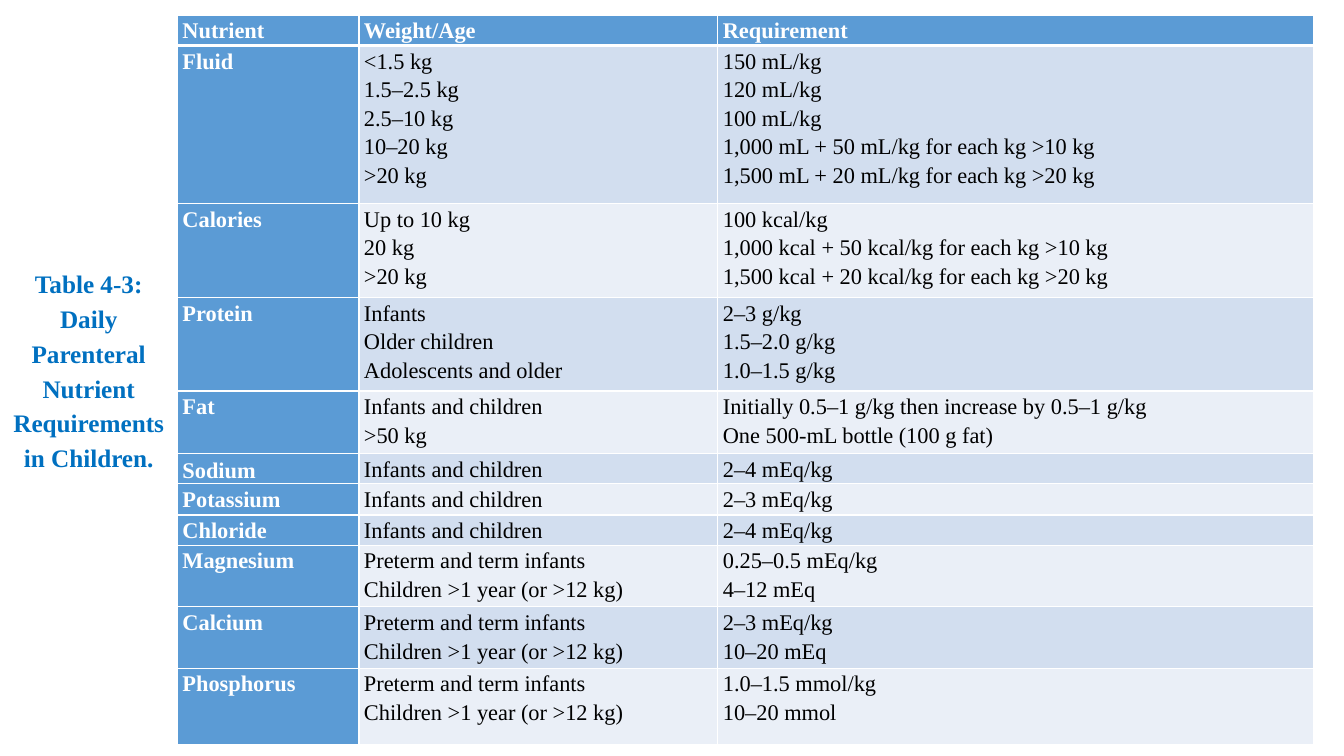
from lxml.etree import SubElement
from pptx import Presentation
from pptx.dml.color import RGBColor
from pptx.enum.text import MSO_ANCHOR, MSO_AUTO_SIZE, PP_ALIGN
from pptx.oxml.ns import qn
from pptx.util import Inches, Pt

COLORS = {
    "title": "0070C0",
    "accent": "5B9BD5",
    "band_dark": "D2DEEF",
    "band_light": "EAEFF7",
    "white": "FFFFFF",
    "black": "000000",
}

HEADINGS = ["Nutrient", "Weight/Age", "Requirement"]
COLUMN_WIDTHS = [1.8, 3.56, 5.91]
HEADING_HEIGHT = 0.3

# Nutrient, row height, and pairs of weight/age and requirement
NUTRIENTS = [
    ("Fluid", 1.57, [
        ("<1.5 kg", "150 mL/kg"),
        ("1.5–2.5 kg", "120 mL/kg"),
        ("2.5–10 kg", "100 mL/kg"),
        ("10–20 kg", "1,000 mL + 50 mL/kg for each kg >10 kg"),
        (">20 kg", "1,500 mL + 20 mL/kg for each kg >20 kg"),
    ]),
    ("Calories", 0.93, [
        ("Up to 10 kg", "100 kcal/kg"),
        ("20 kg", "1,000 kcal + 50 kcal/kg for each kg >10 kg"),
        (">20 kg", "1,500 kcal + 20 kcal/kg for each kg >20 kg"),
    ]),
    ("Protein", 0.93, [
        ("Infants", "2–3 g/kg"),
        ("Older children", "1.5–2.0 g/kg"),
        ("Adolescents and older", "1.0–1.5 g/kg"),
    ]),
    ("Fat", 0.62, [
        ("Infants and children", "Initially 0.5–1 g/kg then increase by 0.5–1 g/kg"),
        (">50 kg", "One 500-mL bottle (100 g fat)"),
    ]),
    ("Sodium", 0.3, [("Infants and children", "2–4 mEq/kg")]),
    ("Potassium", 0.31, [("Infants and children", "2–3 mEq/kg")]),
    ("Chloride", 0.3, [("Infants and children", "2–4 mEq/kg")]),
    ("Magnesium", 0.61, [
        ("Preterm and term infants", "0.25–0.5 mEq/kg"),
        ("Children >1 year (or >12 kg)", "4–12 mEq"),
    ]),
    ("Calcium", 0.61, [
        ("Preterm and term infants", "2–3 mEq/kg"),
        ("Children >1 year (or >12 kg)", "10–20 mEq"),
    ]),
    ("Phosphorus", 0.76, [
        ("Preterm and term infants", "1.0–1.5 mmol/kg"),
        ("Children >1 year (or >12 kg)", "10–20 mmol"),
    ]),
]


class SlideBuilder:
    font = "Times New Roman"
    line_spacing = 1.15

    def __init__(self, presentation):
        self.slide = presentation.slides.add_slide(presentation.slide_layouts[5])

    def set_text(self, frame, text, size, color, bold, align):
        frame.text = text
        for paragraph in frame.paragraphs:
            paragraph.alignment = align
            paragraph.line_spacing = self.line_spacing
            paragraph.space_before = paragraph.space_after = Pt(0)
            for run in paragraph.runs:
                run.font.name = self.font
                run.font.size = Pt(size)
                run.font.bold = bold
                run.font.color.rgb = RGBColor.from_string(COLORS[color])

    def title(self, text, left, top, width, height):
        title = self.slide.shapes.title
        title.left, title.top = Inches(left), Inches(top)
        title.width, title.height = Inches(width), Inches(height)
        frame = title.text_frame
        frame.word_wrap = True
        frame.auto_size = MSO_AUTO_SIZE.NONE
        frame.vertical_anchor = MSO_ANCHOR.MIDDLE
        self.set_text(frame, text, 18, "title", True, PP_ALIGN.CENTER)

    def table(self, left, top, widths, heights):
        table = self.slide.shapes.add_table(
            len(heights), len(widths), Inches(left), Inches(top),
            Inches(sum(widths)), Inches(sum(heights))).table
        for column, width in zip(table.columns, widths):
            column.width = Inches(width)
        for row, height in zip(table.rows, heights):
            row.height = Inches(height)
        return table

    def cell(self, cell, text, fill, color="white", bold=True,
             align=PP_ALIGN.JUSTIFY, top_line=1, bottom_line=1):
        cell.margin_left = cell.margin_right = Inches(0.05)
        cell.margin_top = cell.margin_bottom = 0
        self.set_text(cell.text_frame, text, 16, color, bold, align)
        # Borders come before the fill in the cell properties
        properties = cell._tc.get_or_add_tcPr()
        for side, width in [("L", 1), ("R", 1), ("T", top_line), ("B", bottom_line)]:
            line = SubElement(properties, qn(f"a:ln{side}"), w=str(Pt(width)))
            solid = SubElement(line, qn("a:solidFill"))
            SubElement(solid, qn("a:srgbClr"), val=COLORS["white"])
        cell.fill.solid()
        cell.fill.fore_color.rgb = RGBColor.from_string(COLORS[fill])


def main():
    presentation = Presentation()
    presentation.slide_width = Inches(13.33)
    presentation.slide_height = Inches(7.5)
    builder = SlideBuilder(presentation)

    # Title beside the table
    builder.title("Table 4-3: Daily Parenteral Nutrient Requirements in Children.",
                  0, 1.27, 1.76, 4.77)

    # Heading row
    heights = [HEADING_HEIGHT] + [height for _, height, _ in NUTRIENTS]
    requirements = builder.table(1.76, 0.15, COLUMN_WIDTHS, heights)
    for column, heading in enumerate(HEADINGS):
        align = PP_ALIGN.LEFT if column else PP_ALIGN.JUSTIFY
        builder.cell(requirements.cell(0, column), heading, "accent",
                     align=align, bottom_line=3)

    # Nutrient rows in alternating bands
    for row, (nutrient, _, doses) in enumerate(NUTRIENTS, start=1):
        top_line = 3 if row == 1 else 1
        band = "band_dark" if row % 2 else "band_light"
        builder.cell(requirements.cell(row, 0), nutrient, "accent", top_line=top_line)
        for column, lines in enumerate(zip(*doses), start=1):
            builder.cell(requirements.cell(row, column), "\n".join(lines), band,
                         color="black", bold=False, top_line=top_line)
        if nutrient == "Sodium":
            requirements.cell(row, 0).vertical_anchor = MSO_ANCHOR.MIDDLE

    presentation.save("out.pptx")


if __name__ == "__main__":
    main()
